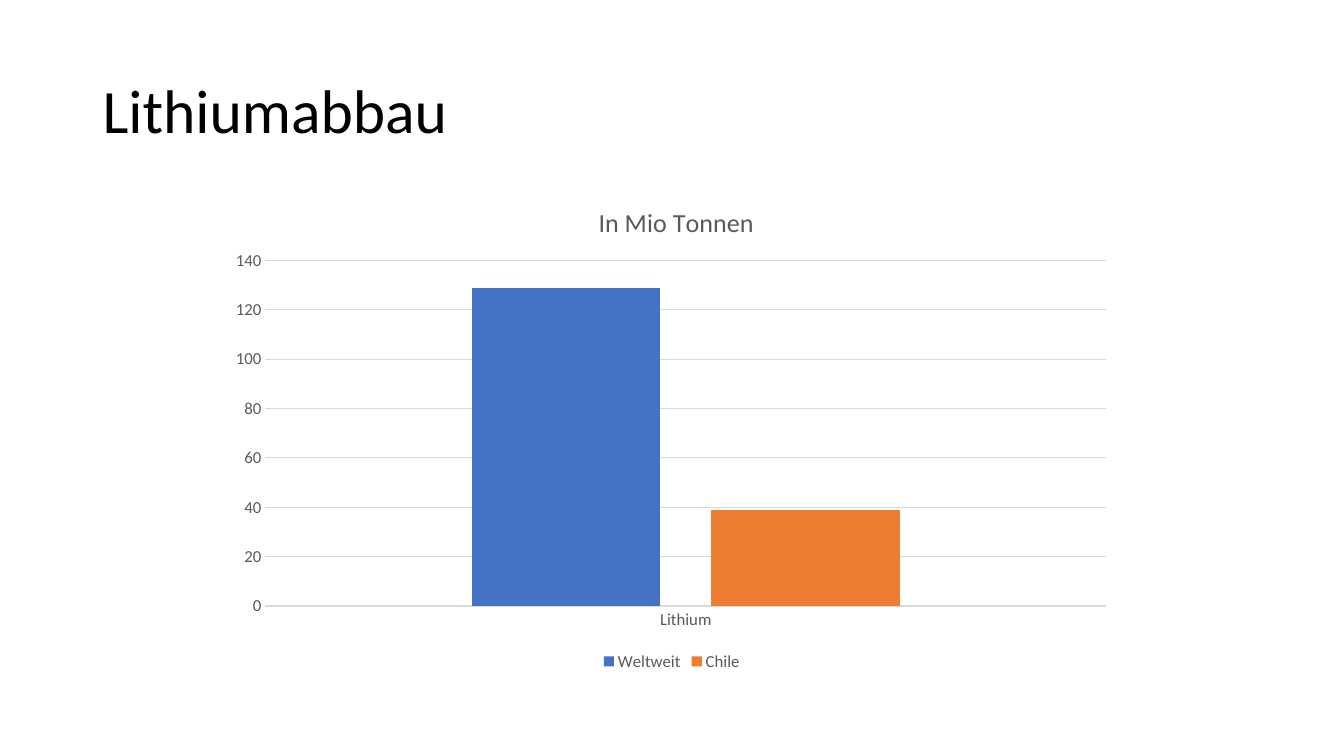
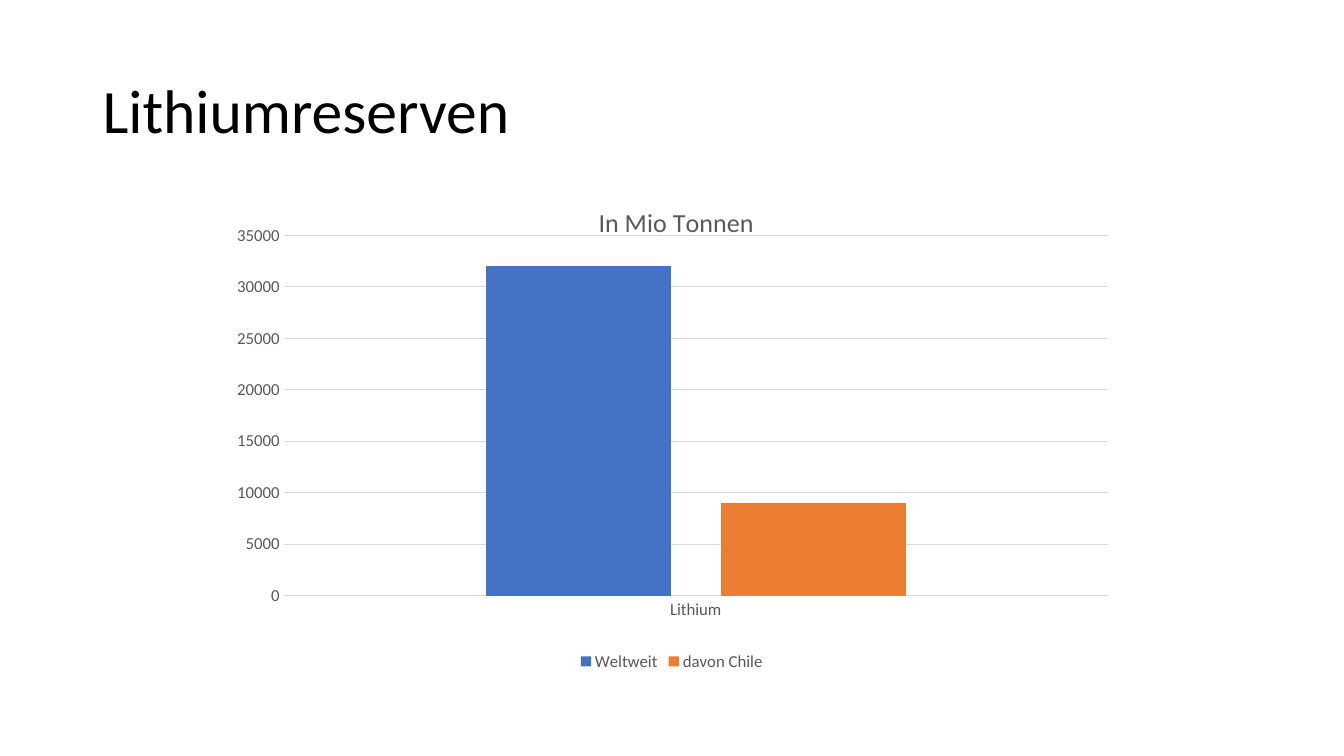
import dataclasses

import pptx
import pptx.chart.data
import pptx.dml.color
import pptx.enum.chart
import pptx.enum.text
import pptx.oxml
import pptx.oxml.ns
import pptx.util

Cm = pptx.util.Cm
Pt = pptx.util.Pt


# Theme shared by both slides
@dataclasses.dataclass(frozen=True)
class Theme:
    font: str = "Calibri"
    heading: str = "000000"
    label: str = "595959"
    rule: str = "D9D9D9"
    columns: tuple = ("4472C4", "ED7D31")
    heading_size: float = 44
    chart_title_size: float = 18.6
    label_size: float = 12
    rule_width: float = 0.75
    slide_size: tuple = (Cm(33.87), Cm(19.05))
    heading_box: tuple = (Cm(2.33), Cm(1.01), Cm(29.21), Cm(3.68))
    chart_box: tuple = (Cm(5.5), Cm(4.45), Cm(22.86), Cm(12.57))


THEME = Theme()


def rgb(color):
    return pptx.dml.color.RGBColor.from_string(color)


# Text
def style_font(font, size, color):
    font.name = THEME.font
    font.size = Pt(size)
    font.bold = False
    font.color.rgb = rgb(color)


def write_text(frame, text, *, size, color, align=None, line_spacing=None):
    paragraph = frame.paragraphs[0]
    paragraph.alignment = align
    paragraph.line_spacing = line_spacing
    run = paragraph.add_run()
    run.text = text
    style_font(run.font, size, color)


def add_heading(slide, text):
    heading = slide.shapes.title
    heading.left, heading.top, heading.width, heading.height = THEME.heading_box
    frame = heading.text_frame
    frame.word_wrap = True
    frame.vertical_anchor = pptx.enum.text.MSO_ANCHOR.MIDDLE
    write_text(frame, text, size=THEME.heading_size, color=THEME.heading,
               align=pptx.enum.text.PP_ALIGN.LEFT, line_spacing=0.9)


# Chart parts
def place_part(parent, index, target=None, **fractions):
    """Fix a chart part at fractions of the chart's width and height."""
    qn = pptx.oxml.ns.qn
    for old_layout in parent.findall(qn("c:layout")):
        parent.remove(old_layout)
    entries = [("layoutTarget", target)] if target else []
    entries += [(f"{side}Mode", "edge") for side in ("x", "y")]
    entries += fractions.items()
    body = "".join(f'<c:{tag} val="{value}"/>' for tag, value in entries)
    parent.insert(index, pptx.oxml.parse_xml(
        f'<c:layout {pptx.oxml.ns.nsdecls("c")}>'
        f"<c:manualLayout>{body}</c:manualLayout></c:layout>"))


def style_rule(line):
    line.color.rgb = rgb(THEME.rule)
    line.width = Pt(THEME.rule_width)


def style_axes(chart, maximum, step):
    for axis in (chart.category_axis, chart.value_axis):
        axis.major_tick_mark = pptx.enum.chart.XL_TICK_MARK.NONE
        axis.minor_tick_mark = pptx.enum.chart.XL_TICK_MARK.NONE
        style_font(axis.tick_labels.font, THEME.label_size, THEME.label)
    style_rule(chart.category_axis.format.line)
    scale = chart.value_axis
    scale.minimum_scale, scale.maximum_scale, scale.major_unit = 0, maximum, step
    scale.format.line.fill.background()
    scale.has_major_gridlines = True
    style_rule(scale.major_gridlines.format.line)


def add_legend(chart):
    chart.has_legend = True
    chart.legend.position = pptx.enum.chart.XL_LEGEND_POSITION.BOTTOM
    chart.legend.include_in_layout = False
    style_font(chart.legend.font, THEME.label_size, THEME.label)


def add_column_chart(slide, title, category, amounts, maximum, step, plot_area):
    data = pptx.chart.data.CategoryChartData()
    data.categories = [category]
    for name, amount in amounts.items():
        data.add_series(name, [amount])
    chart = slide.shapes.add_chart(
        pptx.enum.chart.XL_CHART_TYPE.COLUMN_CLUSTERED, *THEME.chart_box, data).chart
    style_font(chart.font, THEME.label_size, THEME.label)

    chart.has_title = True
    write_text(chart.chart_title.text_frame, title,
               size=THEME.chart_title_size, color=THEME.label)
    chart.chart_title.include_in_layout = False
    title_part = chart.element.find(".//" + pptx.oxml.ns.qn("c:title"))
    place_part(title_part, 1, x=0.414, y=0.046)

    columns = chart.plots[0]
    columns.gap_width, columns.overlap = 219, -27
    columns.vary_by_categories = False
    for series, color in zip(columns.series, THEME.columns):
        series.format.fill.solid()
        series.format.fill.fore_color.rgb = rgb(color)

    style_axes(chart, maximum, step)
    add_legend(chart)
    plot_part = chart.element.find(".//" + pptx.oxml.ns.qn("c:plotArea"))
    place_part(plot_part, 0, "inner", **plot_area)


# Slides
def add_lithium_slide(deck, heading, **chart_content):
    title_only = deck.slide_layouts[5]
    slide = deck.slides.add_slide(title_only)
    add_heading(slide, heading)
    add_column_chart(slide, "In Mio Tonnen", "Lithium", **chart_content)


def main():
    deck = pptx.Presentation()
    deck.slide_width, deck.slide_height = THEME.slide_size
    add_lithium_slide(
        deck, "Lithiumabbau",
        amounts={"Weltweit": 129, "Chile": 39}, maximum=140, step=20,
        plot_area={"x": 0.052, "y": 0.168, "w": 0.927, "h": 0.693})
    add_lithium_slide(
        deck, "Lithiumreserven",
        amounts={"Weltweit": 32000, "davon Chile": 9000}, maximum=35000, step=5000,
        plot_area={"x": 0.072, "y": 0.118, "w": 0.909, "h": 0.722})
    deck.save("out.pptx")


if __name__ == "__main__":
    main()
